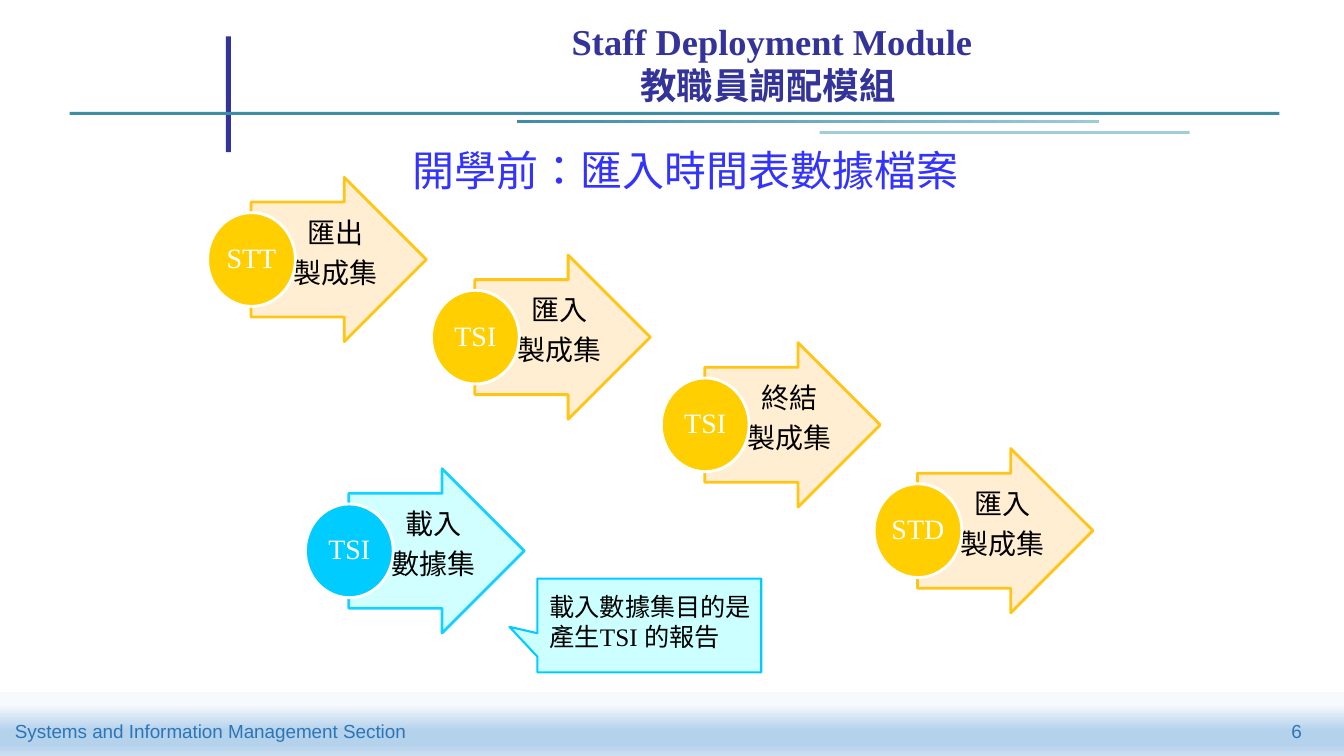
from pptx import Presentation, util as u
from pptx.dml.color import RGBColor
from pptx.enum import lang, shapes, text
from pptx.oxml.ns import qn
from lxml import etree

CJK, SERIF, SANS = "Noto Sans CJK SC", "Times New Roman", "Arial"
KIND, ALIGN, ANCHOR = shapes.MSO_SHAPE, text.PP_ALIGN, text.MSO_ANCHOR

deck = Presentation()
deck.slide_width, deck.slide_height = u.Inches(13.33), u.Inches(7.5)
col, row = deck.slide_width / 13.33, deck.slide_height / 7.5
slide = deck.slides.add_slide(deck.slide_layouts[6])
hue = RGBColor.from_string


def draw(kind, x, y, w, h, fill=None, line=None, thick=2, alpha=None):
    """Add a shape, or a text box when kind is None; x to h are grid cells."""
    box = [int(v) for v in (x * col, y * row, w * col, h * row)]
    if kind is None:
        return slide.shapes.add_textbox(*box)
    item = slide.shapes.add_shape(kind, *box)
    item.shadow.inherit = False
    if isinstance(fill, list):
        # Gradient stops as (percent, colour) pairs
        item.fill.gradient()
        stops = item.fill._fill._gradFill.gsLst
        for old in list(stops):
            stops.remove(old)
        for at, tone in fill:
            stop = etree.SubElement(stops, qn("a:gs"), pos=str(at * 1000))
            etree.SubElement(stop, qn("a:srgbClr"), val=tone)
    else:
        item.fill.solid()
        item.fill.fore_color.rgb = hue(fill)
    if line:
        item.line.color.rgb = hue(line)
        item.line.width = u.Pt(thick)
    else:
        item.line.fill.background()
    if alpha:
        for tone in item._element.spPr.iter(qn("a:srgbClr")):
            etree.SubElement(tone, qn("a:alpha"), val=str(alpha * 1000))
    return item


def write(item, words, size, font, tone, align=ALIGN.LEFT, anchor=ANCHOR.TOP,
          pad=(0.1, 0.05, 0.1, 0.05), bold=False, gap=None, after=0, wrap=True):
    """Fill a shape with text, one paragraph per line."""
    frame = item.text_frame
    frame.text = words
    frame.word_wrap, frame.vertical_anchor = wrap, anchor
    (frame.margin_left, frame.margin_top,
     frame.margin_right, frame.margin_bottom) = [u.Inches(p) for p in pad]
    for par in frame.paragraphs:
        par.alignment, par.space_after = align, u.Pt(after)
        if gap:
            par.line_spacing = gap
        for run in par.runs:
            run.font.size, run.font.bold = u.Pt(size), bold
            run.font.name, run.font.color.rgb = font, hue(tone)
            if not run.text.isascii():
                run.font.language_id = lang.MSO_LANGUAGE_ID.TRADITIONAL_CHINESE
            etree.SubElement(run._r.get_or_add_rPr(), qn("a:ea"), typeface=CJK)
    return item


# Footer band
band = draw(KIND.RECTANGLE, 0, 6.87, 13.33, 0.64,
            [(18, "F7FAFD"), (58, "B5D2EC"), (81, "B5D2EC"), (100, "CEE1F2")])
band.fill.gradient_angle = 270

# Header rules
for x, y, w, h, fill in [
    (2.24, 0.36, 0.05, 1.15, "333399"),
    (0.69, 1.11, 12, 0.03, "3F8DA5"),
    (5.13, 1.19, 5.77, 0.03, [(0, "3F8DA5"), (100, "9BCAD9")]),
    (8.13, 1.3, 3.67, 0.03, "A1CDDB"),
]:
    rule = draw(KIND.RECTANGLE, x, y, w, h, fill)
    if isinstance(fill, list):
        rule.fill.gradient_angle = 0

# Footer text
write(draw(None, 0.05, 7.09, 4.14, 0.33),
      "Systems and Information Management Section", 13.5, SANS, "2E75B6", wrap=False)
write(draw(None, 11.7, 7.09, 1.31, 0.5), "6", 13.5, SANS, "2E75B6", ALIGN.RIGHT)

# Title and subtitle
write(draw(None, 4.28, 0.15, 6.76, 0.95), "Staff Deployment Module\n教職員調配模組 ",
      26, SERIF, "333399", ALIGN.CENTER, ANCHOR.BOTTOM, (0.07, 0.04, 0.07, 0.04),
      bold=True)
write(draw(None, 3.99, 1.38, 7.1, 0.61), "開學前：匯入時間表數據檔案", 30, CJK, "3333FF")

# Steps: an arrow with its label and a round badge
gold, aqua = ("FFEDCC", "FFC000", "FFCF01"), ("CCFFFF", "00CCFF", "00CCFF")
for x, y, code, label, (pale, edge, full) in [
    (2.49, 1.76, "STT", "匯出\n製成集", gold),
    (4.71, 2.53, "TSI", "匯入\n製成集", gold),
    (6.99, 3.4, "TSI", "終結\n製成集", gold),
    (9.1, 4.45, "STD", "匯入\n製成集", gold),
    (3.46, 4.65, "TSI", "載入\n數據集", aqua),
]:
    arrow = draw(KIND.RIGHT_ARROW, x, y, 1.74, 1.63, pale, edge, alpha=90)
    arrow.adjustments[0], arrow.adjustments[1] = 0.7, 0.5
    write(draw(None, x + 0.24, y + 0.19, 1.17, 1.14), label, 20, CJK, "000000",
          ALIGN.CENTER, ANCHOR.MIDDLE, (0.07, 0.02, 0.04, 0.02), gap=0.9, after=7)
    badge = draw(KIND.OVAL, x - 0.43, y + 0.35, 0.87, 0.93, full, "FFFFFF")
    write(badge, code, 20, SERIF, "FFFFFF", ALIGN.CENTER, ANCHOR.MIDDLE,
          (0.02,) * 4, gap=0.9, wrap=False)

# Callout on the purpose of loading
note = draw(KIND.RECTANGULAR_CALLOUT, 5.33, 5.74, 2.22, 0.93, "CCFFFF", "00CCFF", 1.5)
note.adjustments[0], note.adjustments[1] = -0.625, 0.015
write(note, "載入數據集目的是\n產生TSI 的報告", 18, SERIF, "000000", anchor=ANCHOR.MIDDLE,
      pad=(0.12, 0.02, 0.08, 0.02), gap=u.Pt(16), after=6)

deck.save("out.pptx")
